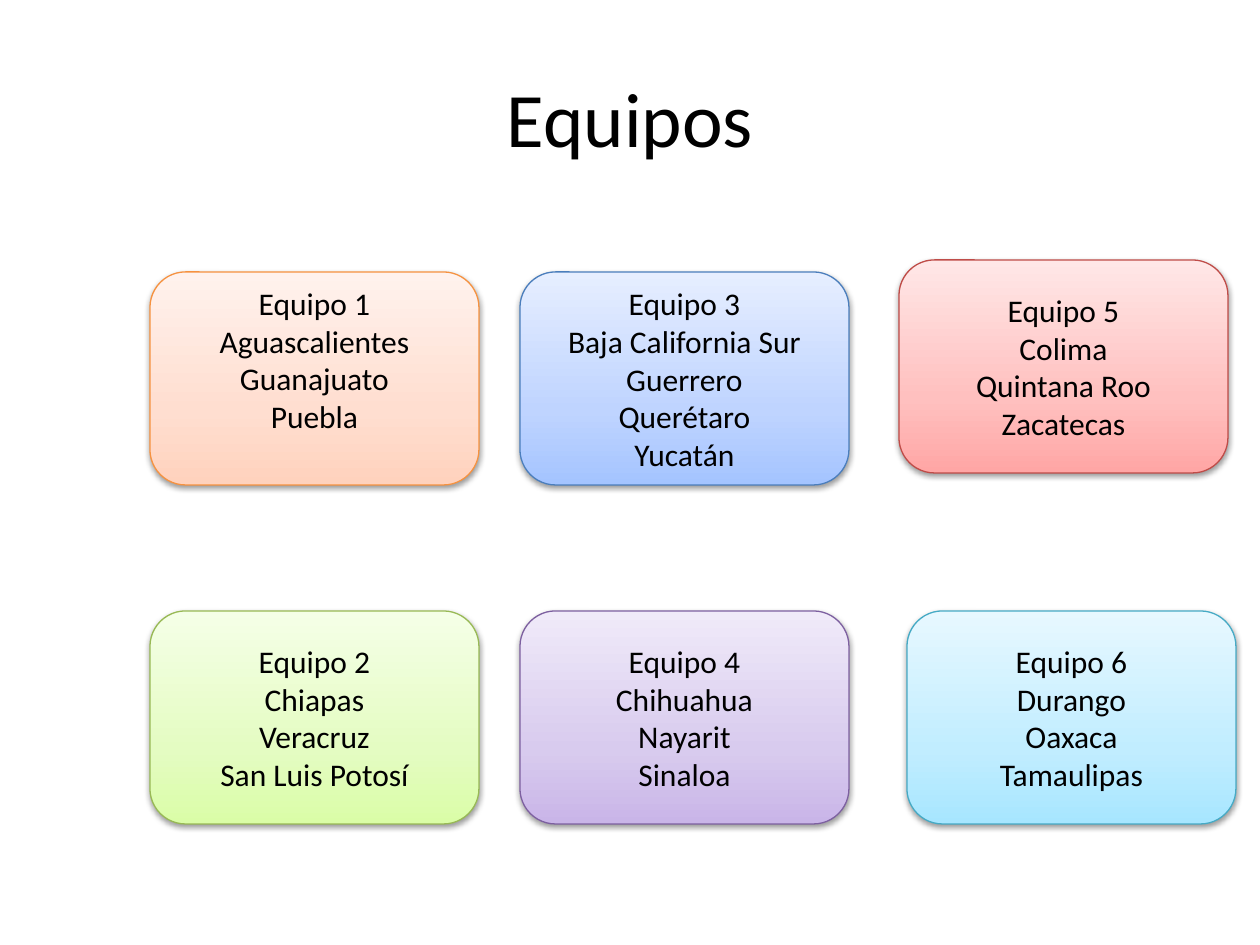
from dataclasses import dataclass

from lxml.etree import SubElement
from pptx import Presentation
from pptx.dml.color import RGBColor
from pptx.enum.shapes import MSO_SHAPE
from pptx.enum.text import MSO_ANCHOR, PP_ALIGN
from pptx.oxml.ns import qn
from pptx.shapes.autoshape import Shape
from pptx.slide import Slide
from pptx.text.text import TextFrame
from pptx.util import Emu, Pt

SCALE = 914400 / 126
FONT = "Calibri"
WIDE, HIGH = 329, 213
PAD = 6
STOPS = (0, 35, 100)
COLORS = {
    "text": "000000",
    "orange": ("FFD2BD", "FFDED0", "FFF2ED", "F69240"),
    "blue": ("A4C4FF", "BFD4FF", "E6EEFF", "4B7EBC"),
    "red": ("FFA6A5", "FFC0BF", "FFE7E7", "BF4C48"),
    "green": ("DAFDA7", "E4FCC2", "F5FFE7", "98B955"),
    "purple": ("C9B5E8", "D8CBEE", "F0EAF9", "7D60A0"),
    "cyan": ("A7E6FF", "C1EDFF", "E7F8FF", "46AAC5"),
}


@dataclass
class Team:
    num: int
    left: int
    top: int
    color: str
    states: tuple[str, ...]
    foot: int = PAD


TEAMS = (
    Team(1, 150, 272, "orange", ("Aguascalientes", "Guanajuato", "Puebla"), PAD + 38),
    Team(3, 520, 272, "blue",
         ("Baja California Sur", "Guerrero", "Querétaro", "Yucatán")),
    Team(5, 899, 260, "red", ("Colima", "Quintana Roo", "Zacatecas")),
    Team(2, 150, 611, "green", ("Chiapas", "Veracruz", "San Luis Potosí")),
    Team(4, 520, 611, "purple", ("Chihuahua", "Nayarit", "Sinaloa")),
    Team(6, 907, 611, "cyan", ("Durango", "Oaxaca", "Tamaulipas")),
)


def px(size: int) -> Emu:
    return Emu(round(size * SCALE))


def style(frame: TextFrame, size: int) -> None:
    frame.vertical_anchor = MSO_ANCHOR.MIDDLE
    for para in frame.paragraphs:
        para.alignment = PP_ALIGN.CENTER
        for run in para.runs:
            run.font.name = FONT
            run.font.size = Pt(size)
            run.font.color.rgb = RGBColor.from_string(COLORS["text"])


def shade(card: Shape, tints: tuple[str, ...]) -> None:
    card.fill.gradient()
    card.fill.gradient_angle = 90
    stops = card._element.spPr.find(".//" + qn("a:gsLst"))
    for old in list(stops):
        stops.remove(old)
    for pos, tint in zip(STOPS, tints):
        stop = SubElement(stops, qn("a:gs"), pos=str(pos * 1000))
        SubElement(stop, qn("a:srgbClr"), val=tint)


def lift(card: Shape) -> None:
    card.shadow.inherit = False
    effects = card._element.spPr.find(qn("a:effectLst"))
    drop = SubElement(effects, qn("a:outerShdw"), blurRad="40000", dist="20000",
                      dir="5400000", rotWithShape="0")
    black = SubElement(drop, qn("a:srgbClr"), val=COLORS["text"])
    SubElement(black, qn("a:alpha"), val="38000")


def draw(slide: Slide, team: Team) -> None:
    card = slide.shapes.add_shape(
        MSO_SHAPE.ROUNDED_RECTANGLE,
        px(team.left), px(team.top), px(WIDE), px(HIGH))
    *tints, edge = COLORS[team.color]
    shade(card, tuple(tints))
    card.line.color.rgb = RGBColor.from_string(edge)
    card.line.width = Pt(0.75)
    lift(card)
    frame = card.text_frame
    frame.text = "\n".join((f"Equipo {team.num}", *team.states))
    frame.margin_top = px(PAD)
    frame.margin_bottom = px(team.foot)
    style(frame, 18)


def main() -> None:
    deck = Presentation()
    deck.slide_width, deck.slide_height = px(1260), px(945)
    slide = deck.slides.add_slide(deck.slide_layouts[5])
    title = slide.shapes.title
    title.left, title.top = px(63), px(38)
    title.width, title.height = px(1134), px(158)
    title.text_frame.text = "Equipos"
    style(title.text_frame, 44)
    for team in TEAMS:
        draw(slide, team)
    deck.save("out.pptx")


if __name__ == "__main__":
    main()
